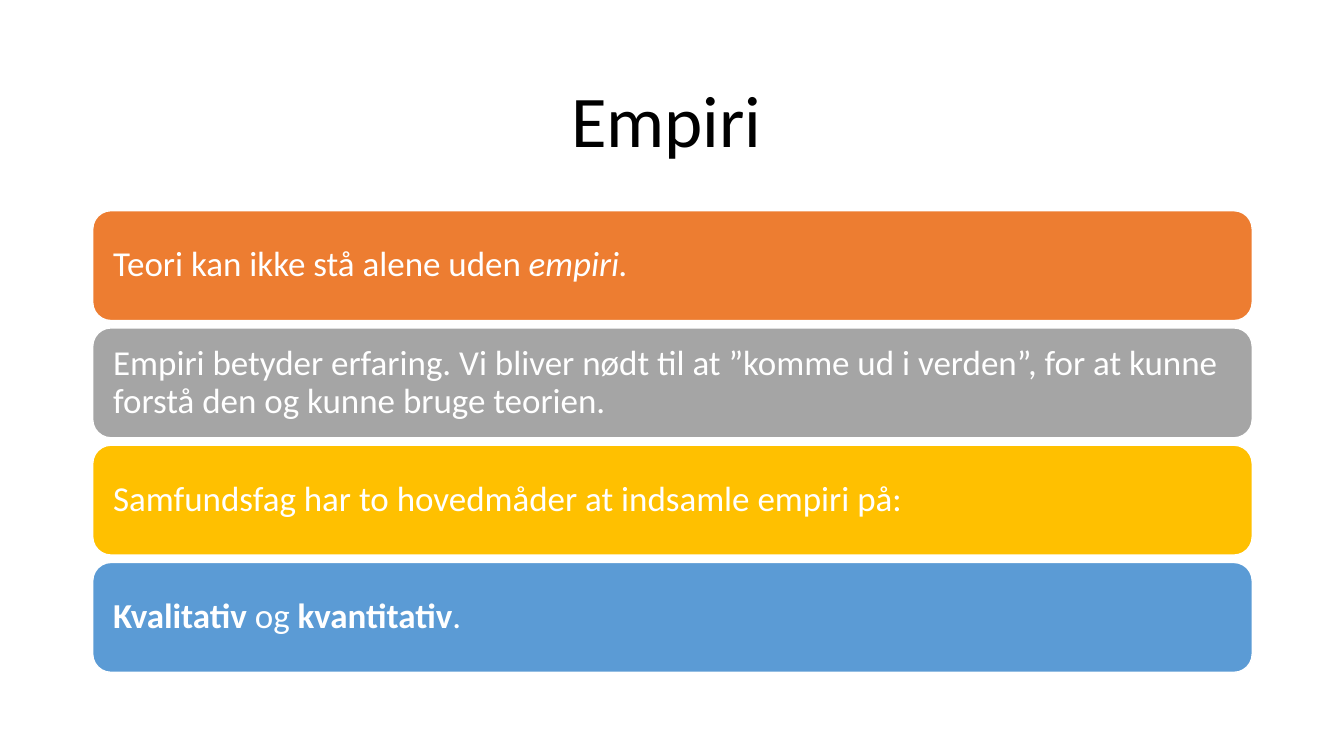
from dataclasses import dataclass

from pptx import Presentation
from pptx.dml.color import RGBColor
from pptx.enum.shapes import MSO_SHAPE
from pptx.enum.text import MSO_ANCHOR, MSO_AUTO_SIZE, PP_ALIGN
from pptx.util import Inches, Pt


@dataclass(frozen=True)
class Theme:
    font: str = "Calibri"
    title_size: int = 52
    bar_size: int = 25
    title_color: str = "000000"
    light: str = "FFFFFF"
    bar_colors: tuple = ("ED7D31", "A5A5A5", "FFC000", "5B9BD5")


THEME = Theme()

# Layout in inches
LEFT, WIDTH = 0.92, 11.5
BARS_TOP, BARS_BOTTOM, BAR_HEIGHT = 2.09, 6.67, 1.09

# Each statement is a list of (text, style) runs
STATEMENTS = [
    [("Teori kan ikke stå alene uden ", ""), ("empiri.", "italic")],
    [("Empiri betyder erfaring. Vi bliver nødt til at ”komme ud i verden”, "
      "for at kunne forstå den og kunne bruge teorien.", "")],
    [("Samfundsfag har to hovedmåder at indsamle empiri på:", "")],
    [("Kvalitativ", "bold"), (" og ", ""), ("kvantitativ", "bold"), (".", "")],
]


def format_paragraph(paragraph, size, color, alignment):
    paragraph.alignment = alignment
    paragraph.line_spacing = 0.9
    paragraph.font.name = THEME.font
    paragraph.font.size = Pt(size)
    paragraph.font.color.rgb = RGBColor.from_string(color)


def set_title(slide, text):
    title = slide.shapes.title
    title.left, title.top = Inches(LEFT), Inches(0.61)
    title.width, title.height = Inches(WIDTH), Inches(1.24)
    frame = title.text_frame
    frame.text = text
    frame.auto_size = MSO_AUTO_SIZE.NONE
    frame.vertical_anchor = MSO_ANCHOR.MIDDLE
    # The wider right inset sets the title slightly left of centre
    frame.margin_right = Inches(0.22)
    format_paragraph(frame.paragraphs[0], THEME.title_size,
                     THEME.title_color, PP_ALIGN.CENTER)


def add_bar(slide, top, color, runs):
    bar = slide.shapes.add_shape(
        MSO_SHAPE.ROUNDED_RECTANGLE, Inches(LEFT), Inches(top),
        Inches(WIDTH), Inches(BAR_HEIGHT))
    bar.shadow.inherit = False
    bar.fill.solid()
    bar.fill.fore_color.rgb = RGBColor.from_string(color)
    bar.line.color.rgb = RGBColor.from_string(THEME.light)
    bar.line.width = Pt(1)

    frame = bar.text_frame
    frame.word_wrap = True
    frame.vertical_anchor = MSO_ANCHOR.MIDDLE
    frame.margin_left = frame.margin_right = Inches(0.15)
    paragraph = frame.paragraphs[0]
    format_paragraph(paragraph, THEME.bar_size, THEME.light, PP_ALIGN.LEFT)
    for text, style in runs:
        run = paragraph.add_run()
        run.text = text
        if style == "bold":
            run.font.bold = True
        elif style == "italic":
            run.font.italic = True


def main():
    presentation = Presentation()
    presentation.slide_width = Inches(13.33)
    presentation.slide_height = Inches(7.5)
    slide = presentation.slides.add_slide(presentation.slide_layouts[5])

    set_title(slide, "Empiri")

    # Evenly spaced bars between the top and bottom edges
    step = (BARS_BOTTOM - BAR_HEIGHT - BARS_TOP) / (len(STATEMENTS) - 1)
    for index, (color, runs) in enumerate(zip(THEME.bar_colors, STATEMENTS)):
        add_bar(slide, BARS_TOP + index * step, color, runs)

    presentation.save("out.pptx")


if __name__ == "__main__":
    main()
